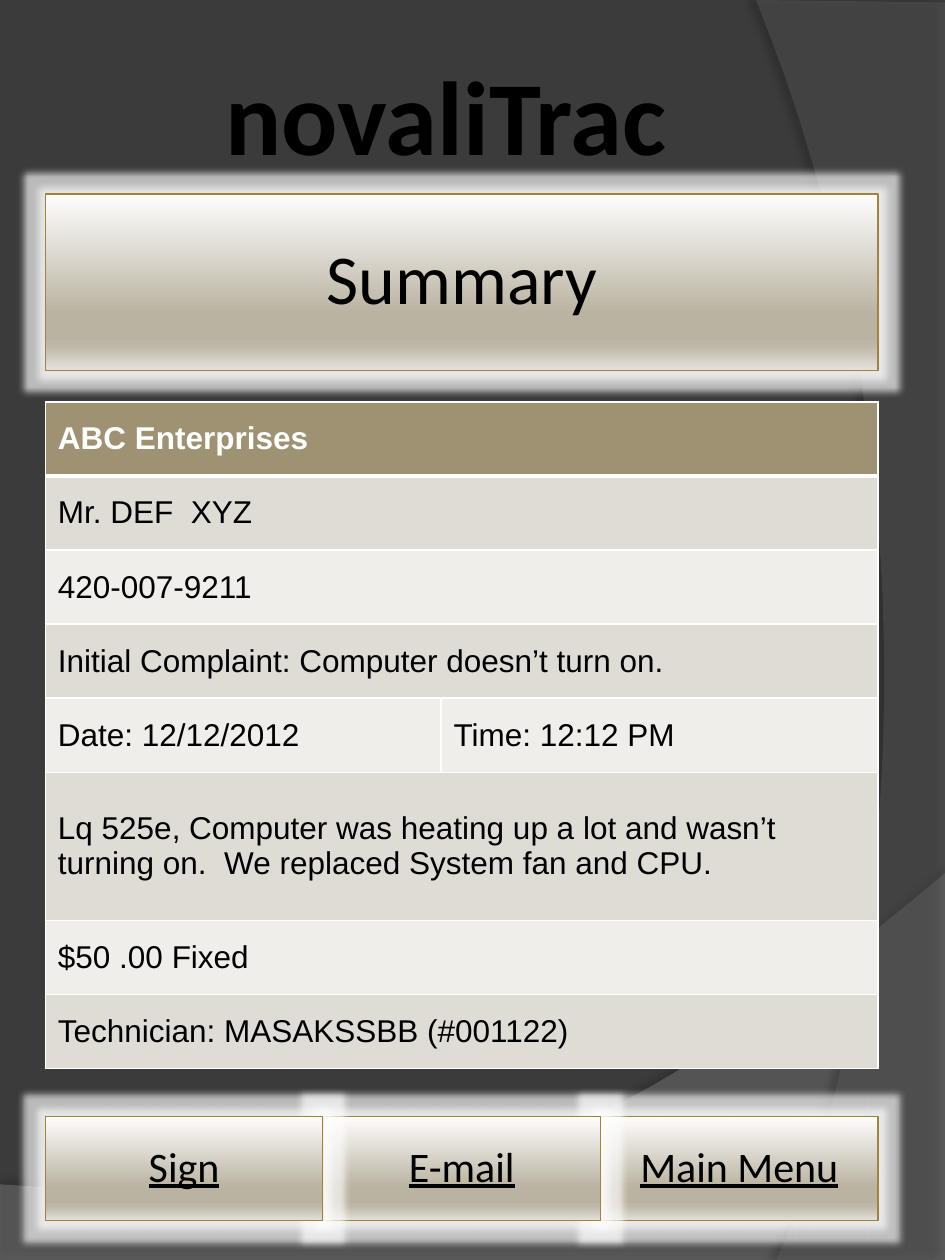
from lxml.etree import SubElement
from pptx import Presentation
from pptx.dml.color import RGBColor
from pptx.enum.shapes import MSO_SHAPE
from pptx.enum.text import MSO_ANCHOR, MSO_AUTO_SIZE, PP_ALIGN
from pptx.oxml import parse_xml
from pptx.oxml.ns import nsdecls, qn
from pptx.util import Inches, Pt

# Grid shared by banner, table and buttons
LEFT, WIDTH = 0.36, 6.61
ROW_H = 0.588
GRADIENT = [(0, "FEFEFE"), (68, "BAB3A2"), (81, "B8B19F"),
            (86, "BFB8A9"), (100, "E3E1DB")]
ROWS = [
    ["ABC Enterprises"],
    ["Mr. DEF  XYZ"],
    ["420-007-9211"],
    ["Initial Complaint: Computer doesn’t turn on."],
    ["Date: 12/12/2012", "Time: 12:12 PM"],
    ["Lq 525e, Computer was heating up a lot and wasn’t turning on.  "
     "We replaced System fan and CPU."],
    ["$50 .00 Fixed"],
    ["Technician: MASAKSSBB (#001122)"],
]
TALL_ROW = 5
BUTTONS = ["Sign", "E-mail", "Main Menu"]


def rgb(value):
    return RGBColor.from_string(value)


def set_font(p, size, name, color="000000", bold=False, underline=False):
    p.font.size, p.font.name = Pt(size), name
    p.font.bold, p.font.underline = bold, underline
    p.font.color.rgb = rgb(color)


def add_effect(sp, tag, color, opacity, **attrs):
    """Give a shape one glow or shadow in place of the theme's effects."""
    sp.shadow.inherit = False
    effects = sp._element.spPr.find(qn("a:effectLst"))
    effect = SubElement(effects, qn(f"a:{tag}"),
                        {k: str(int(v)) for k, v in attrs.items()})
    clr = SubElement(effect, qn("a:srgbClr"), val=color)
    SubElement(clr, qn("a:alpha"), val=str(opacity * 1000))


def curve(p0, p1, p2, p3, steps=40):
    """Points along a cubic curve, without its start."""
    for i in range(1, steps + 1):
        t = i / steps
        u = 1 - t
        yield tuple(u**3 * a + 3 * u * u * t * b + 3 * u * t * t * c + t**3 * d
                    for a, b, c, d in zip(p0, p1, p2, p3))


def add_wave(s, points, color, opacity, shade, dist, angle):
    pts = [(Inches(x), Inches(y)) for x, y in points]
    builder = s.shapes.build_freeform(*pts[0])
    builder.add_line_segments(pts[1:], close=True)
    sp = builder.convert_to_shape()
    sp.fill.solid()
    sp.fill.fore_color.rgb = rgb(color)
    clr = sp._element.spPr.find(qn("a:solidFill"))[0]
    SubElement(clr, qn("a:alpha"), val=str(opacity * 1000))
    sp.line.fill.background()
    add_effect(sp, "outerShdw", "000000", shade, blurRad=Pt(4),
               dist=Pt(dist), dir=angle * 60000)


def add_title(s, text):
    box = s.shapes.add_textbox(Inches(0.57), Inches(0.35), Inches(5.94), Inches(1.11))
    tf = box.text_frame
    tf.word_wrap = True
    tf.auto_size = MSO_AUTO_SIZE.SHAPE_TO_FIT_TEXT
    p = tf.paragraphs[0]
    p.text, p.alignment = text, PP_ALIGN.CENTER
    set_font(p, 60, "Calibri", bold=True)


def add_panel(s, text, x, y, w, h, size, underline=False):
    """Glowing gradient rectangle with a centred label."""
    sp = s.shapes.add_shape(MSO_SHAPE.RECTANGLE, *map(Inches, (x, y, w, h)))
    stops = "".join(f'<a:gs pos="{pos * 1000}"><a:srgbClr val="{c}"/></a:gs>'
                    for pos, c in GRADIENT)
    grad = parse_xml(f'<a:gradFill {nsdecls("a")} rotWithShape="1"><a:gsLst>{stops}'
                     '</a:gsLst><a:lin ang="5400000" scaled="0"/></a:gradFill>')
    sp._element.spPr.find(qn("a:prstGeom")).addnext(grad)
    sp.line.color.rgb = rgb("A1843A")
    sp.line.width = Pt(0.75)
    add_effect(sp, "glow", "FFFFFF", 65, rad=Pt(8))
    tf = sp.text_frame
    tf.word_wrap = True
    tf.vertical_anchor = MSO_ANCHOR.MIDDLE
    tf.margin_left = tf.margin_right = tf.margin_top = tf.margin_bottom = Inches(0.1)
    p = tf.paragraphs[0]
    p.text, p.alignment, p.line_spacing = text, PP_ALIGN.CENTER, 0.9
    set_font(p, size, "Calibri", underline=underline)


def style_cell(cell, fill, top, bottom):
    cell.fill.solid()
    cell.fill.fore_color.rgb = rgb(fill)
    cell.vertical_anchor = MSO_ANCHOR.MIDDLE
    tcPr = cell._tc.get_or_add_tcPr()
    for i, (side, width) in enumerate(zip("LRTB", (1, 1, top, bottom))):
        tcPr.insert(i, parse_xml(
            f'<a:ln{side} {nsdecls("a")} w="{Pt(width)}"><a:solidFill>'
            f'<a:srgbClr val="FFFFFF"/></a:solidFill></a:ln{side}>'))


def add_summary_table(s):
    frame = s.shapes.add_table(len(ROWS), 2, Inches(LEFT), Inches(3.19),
                               Inches(WIDTH), Inches(ROW_H * 9))
    table = frame.table
    table.first_row = table.horz_banding = False
    table.columns[0].width, table.columns[1].width = Inches(3.14), Inches(3.47)
    for i, texts in enumerate(ROWS):
        header = i == 0
        table.rows[i].height = Inches(ROW_H * (2 if i == TALL_ROW else 1))
        fill = "9E9273" if header else ("F0EEEB", "DFDCD5")[i % 2]
        for j in range(2):
            style_cell(table.cell(i, j), fill, 3 if i == 1 else 1, 3 if header else 1)
        if len(texts) == 1:
            table.cell(i, 0).merge(table.cell(i, 1))
        for j, text in enumerate(texts):
            p = table.cell(i, j).text_frame.paragraphs[0]
            p.text = text
            set_font(p, 18, "Arial", "FFFFFF" if header else "000000", bold=header)


def main():
    prs = Presentation()
    prs.slide_width, prs.slide_height = Inches(7.5), Inches(10)
    s = prs.slides.add_slide(prs.slide_layouts[6])

    # Dark backdrop with two translucent waves
    s.background.fill.solid()
    s.background.fill.fore_color.rgb = rgb("3B3B3B")
    bottom = [(0, 9.4), (0, 10.01), (7.5, 10.01), (7.5, 6.93),
              *curve((7.5, 6.93), (4.19, 9.72), (2.93, 9.58), (0, 9.4))]
    side = [(7.5, 0.02), (7.5, 10), (6.16, 10),
            *curve((6.16, 10), (7.01, 8.26), (7.63, 4.01), (6, 0))]
    add_wave(s, bottom[:-1], "7F7F7F", 45, 35, 3.5, 270)
    add_wave(s, side, "5E5E5E", 40, 45, 4, 180)

    # Title, table and banner
    add_title(s, "novaliTrac")
    add_summary_table(s)
    add_panel(s, "Summary", LEFT, 1.54, WIDTH, 1.4, 40)

    # Buttons, right to left so each glow falls on its right neighbour
    step = WIDTH / len(BUTTONS)
    for i, label in reversed(list(enumerate(BUTTONS))):
        add_panel(s, label, LEFT + i * step, 8.86, step, 0.83, 24, underline=True)

    prs.save("out.pptx")


if __name__ == "__main__":
    main()
